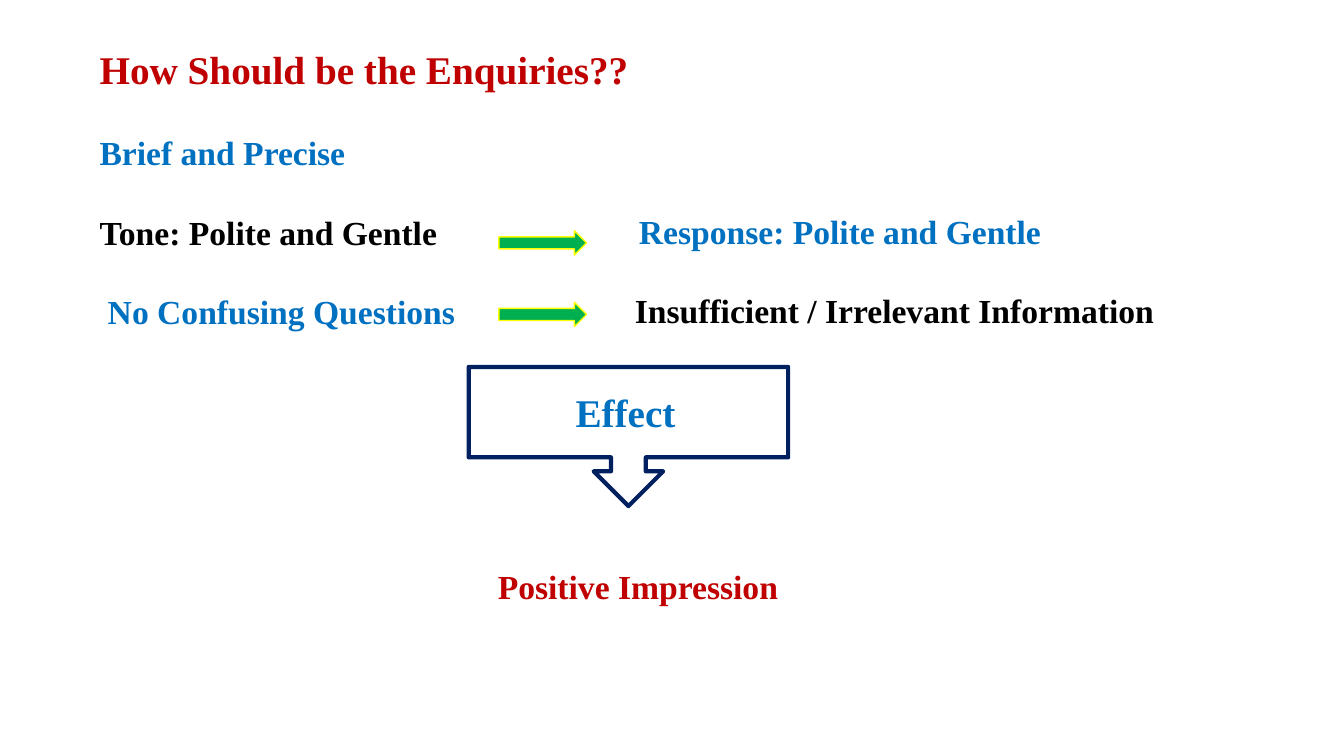
from pptx import Presentation
from pptx.dml.color import RGBColor
from pptx.enum.shapes import MSO_SHAPE as Preset
from pptx.enum.text import MSO_ANCHOR as Anchor, PP_ALIGN as Align
from pptx.util import Pt

FONT = "Times New Roman"
RED = RGBColor(0xC0, 0x00, 0x00)
BLUE = RGBColor(0x00, 0x70, 0xC0)
BLACK = RGBColor(0x00, 0x00, 0x00)
WHITE = RGBColor(0xFF, 0xFF, 0xFF)
NAVY = RGBColor(0x00, 0x20, 0x60)
GREEN = RGBColor(0x00, 0xB0, 0x50)
YELLOW = RGBColor(0xFF, 0xFF, 0x00)

LEFT = 64.1
FIRST_ROW = 90.7
ROW_PITCH = 56.9


def write(frame, words, size, color):
    frame.word_wrap = True
    line = frame.paragraphs[0]
    line.text = words
    line.font.name = FONT
    line.font.size = Pt(size)
    line.font.bold = True
    line.font.color.rgb = color
    return line


def add_label(slide, words, left, top, width, color, size=24, height=36):
    label = slide.shapes.add_textbox(Pt(left), Pt(top), Pt(width), Pt(height))
    write(label.text_frame, words, size, color)


def add_block(slide, preset, left, top, width, height, fill, outline, weight):
    block = slide.shapes.add_shape(preset, Pt(left), Pt(top), Pt(width), Pt(height))
    block.shadow.inherit = False
    block.fill.solid()
    block.fill.fore_color.rgb = fill
    block.line.color.rgb = outline
    block.line.width = Pt(weight)
    return block


def add_effect(slide):
    effect = add_block(slide, Preset.DOWN_ARROW_CALLOUT,
                       334.8, 262.1, 228.2, 99.4, WHITE, NAVY, 3)
    frame = effect.text_frame
    frame.vertical_anchor = Anchor.MIDDLE
    frame.margin_right = Pt(11.2)
    write(frame, "Effect", 28, BLUE).alignment = Align.CENTER


def main():
    deck = Presentation()
    deck.slide_width, deck.slide_height = Pt(960), Pt(540)
    slide = deck.slides.add_slide(deck.slide_layouts[6])

    # Heading
    add_label(slide, "How Should be the Enquiries??", LEFT, 28.8, 473.8, RED, 28, 41)

    # Qualities of an enquiry, one per row
    qualities = [
        ("Brief and Precise", LEFT, 556.6, BLUE),
        ("Tone: Polite and Gentle", LEFT, 363.6, BLACK),
        ("No Confusing Questions", 69.9, 285.8, BLUE),
    ]
    for row, (words, left, width, color) in enumerate(qualities):
        add_label(slide, words, left, FIRST_ROW + row * ROW_PITCH, width, color)

    # Arrows from the last two qualities to what they bring
    outcomes = [
        ("Response: Polite and Gentle", 449.3, 377.3, BLUE, 164.9),
        ("Insufficient / Irrelevant Information", 446.4, 443.5, BLACK, 216),
    ]
    for row, (words, left, width, color, arrow_top) in enumerate(outcomes, 1):
        add_block(slide, Preset.RIGHT_ARROW, 356.4, arrow_top, 62.6, 17.3,
                  GREEN, YELLOW, 1)
        add_label(slide, words, left, FIRST_ROW + row * ROW_PITCH - 0.7, width, color)

    # Effect and the impression it leaves
    add_effect(slide)
    add_label(slide, "Positive Impression", 348.5, 400.3, 228.2, RED, height=65.5)

    deck.save("out.pptx")


if __name__ == "__main__":
    main()
